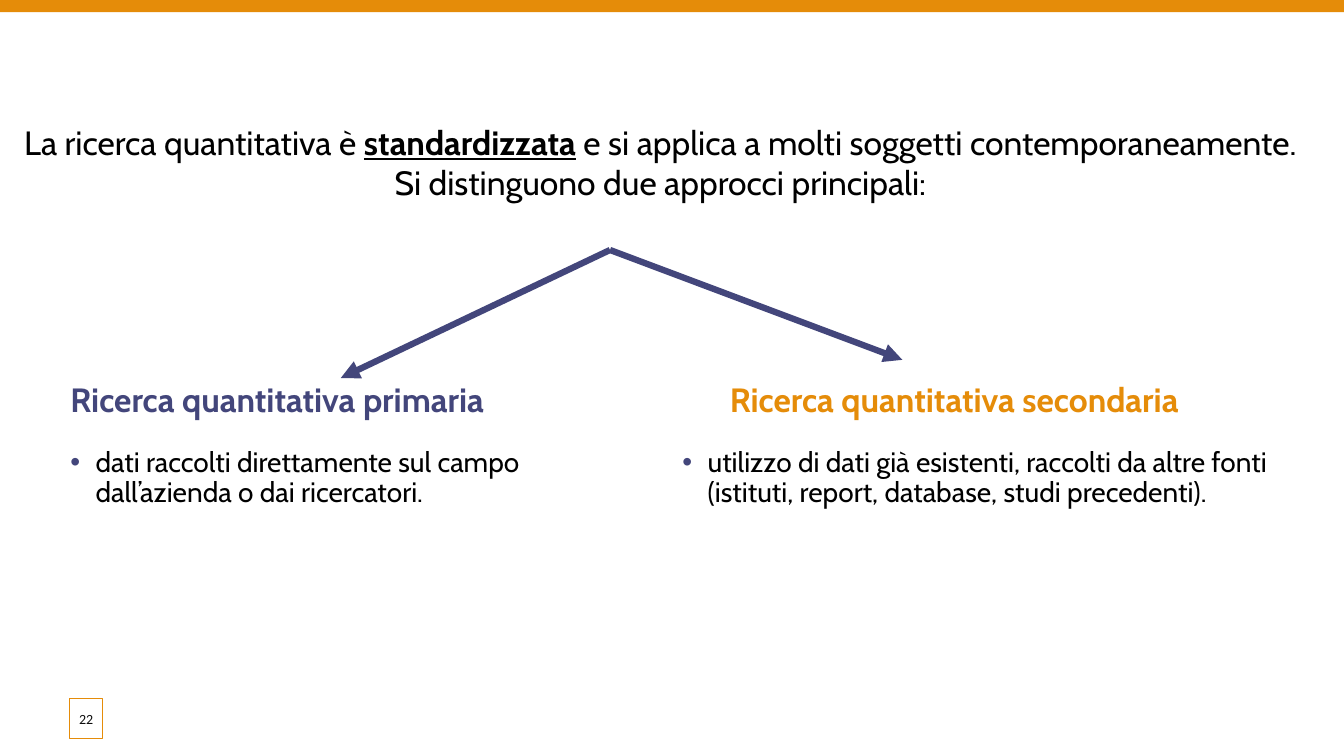
from dataclasses import dataclass

from lxml.etree import SubElement
from pptx import Presentation
from pptx.dml.color import RGBColor
from pptx.enum.shapes import MSO_CONNECTOR as Connector, MSO_SHAPE as Preset
from pptx.enum.text import MSO_ANCHOR as Anchor, PP_ALIGN as Align
from pptx.oxml.ns import qn
from pptx.util import Inches, Pt

ORANGE = RGBColor(0xE5, 0x8C, 0x09)
INDIGO = RGBColor(0x43, 0x46, 0x7B)
BLACK = RGBColor(0, 0, 0)
WHITE = RGBColor(0xFF, 0xFF, 0xFF)
DARK = RGBColor(0x0D, 0x0D, 0x0D)

SLIDE_WIDTH = 13.33
FORK = (6.05, 2.48)
HEADING_TOP, DETAIL_TOP = 3.75, 4.4


@dataclass(frozen=True)
class Approach:
    heading: str
    detail: str
    color: RGBColor
    heading_left: float
    detail_left: float
    detail_width: float
    arrow_tip: tuple[float, float]


APPROACHES = (
    Approach("Ricerca quantitativa primaria",
             "dati raccolti direttamente sul campo dall’azienda o dai ricercatori.",
             INDIGO, 0.6, 0.6, 5.57, (3.38, 3.75)),
    Approach("Ricerca quantitativa secondaria",
             "utilizzo di dati già esistenti, raccolti da altre fonti "
             "(istituti, report, database, studi precedenti).",
             ORANGE, 7.14, 6.67, 6.04, (8.95, 3.57)),
)


def add_span(para, text: str, *, size: float, color: RGBColor = BLACK,
             font: str = "Cabin", bold: bool = False, underline: bool = False):
    span = para.add_run()
    span.text = text
    span.font.name = font
    span.font.size = Pt(size)
    span.font.bold = bold
    span.font.underline = underline
    span.font.color.rgb = color


def add_box(page, left: float, top: float, width: float, height: float):
    box = page.shapes.add_textbox(*map(Inches, (left, top, width, height)))
    box.text_frame.word_wrap = True
    return box.text_frame


def add_rectangle(page, left: float, top: float, width: float, height: float,
                  fill: RGBColor):
    shape = page.shapes.add_shape(
        Preset.RECTANGLE, *map(Inches, (left, top, width, height)))
    shape.shadow.inherit = False
    shape.fill.solid()
    shape.fill.fore_color.rgb = fill
    shape.line.fill.background()
    return shape


def add_bullet(para, color: RGBColor):
    properties = para._p.get_or_add_pPr()
    properties.set("marL", str(Inches(0.25)))
    properties.set("indent", str(-Inches(0.25)))
    bullet_color = SubElement(properties, qn("a:buClr"))
    SubElement(bullet_color, qn("a:srgbClr"), val=str(color))
    SubElement(properties, qn("a:buFont"), typeface="Arial")
    SubElement(properties, qn("a:buChar"), char="•")


def add_arrow(page, start: tuple[float, float], end: tuple[float, float]):
    arrow = page.shapes.add_connector(
        Connector.STRAIGHT, *map(Inches, (*start, *end)))
    arrow.line.color.rgb = INDIGO
    arrow.line.width = Pt(4.5)
    SubElement(arrow.line._get_or_add_ln(), qn("a:tailEnd"), type="triangle")
    SubElement(arrow._element.spPr, qn("a:effectLst"))


def add_introduction(page):
    frame = add_box(page, 0.11, 1.16, 12.88, 0.91)
    first = frame.paragraphs[0]
    second = frame.add_paragraph()
    first.alignment = second.alignment = Align.CENTER
    add_span(first, "La ricerca quantitativa è ", size=24)
    add_span(first, "standardizzata", size=24, bold=True, underline=True)
    add_span(first, " e si applica a molti soggetti contemporaneamente.", size=24)
    add_span(second, "Si distinguono due approcci principali:", size=24)


def add_approach(page, approach: Approach):
    heading = add_box(page, approach.heading_left, HEADING_TOP, 5.57, 0.65).paragraphs[0]
    heading.line_spacing = 0.9
    add_span(heading, approach.heading, size=24, color=approach.color, bold=True)
    detail = add_box(page, approach.detail_left, DETAIL_TOP,
                     approach.detail_width, 2.06).paragraphs[0]
    detail.line_spacing = 0.9
    add_bullet(detail, INDIGO)
    add_span(detail, approach.detail, size=20)
    add_arrow(page, FORK, approach.arrow_tip)


def add_page_number(page, number: str):
    badge = add_rectangle(page, 0.69, 6.93, 0.33, 0.4, WHITE)
    fill_color = badge._element.spPr.find(qn("a:solidFill"))[0]
    SubElement(fill_color, qn("a:alpha"), val="82000")
    badge.line.color.rgb = ORANGE
    badge.line.width = Pt(0.75)
    frame = badge.text_frame
    frame.margin_left = frame.margin_right = 0
    frame.vertical_anchor = Anchor.MIDDLE
    para = frame.paragraphs[0]
    para.alignment = Align.CENTER
    add_span(para, number, size=10, color=DARK, font="Calibri")


def main():
    deck = Presentation()
    deck.slide_width = Inches(SLIDE_WIDTH)
    deck.slide_height = Inches(7.5)
    page = deck.slides.add_slide(deck.slide_layouts[6])
    add_rectangle(page, 0, 0, SLIDE_WIDTH, 0.12, ORANGE)
    add_introduction(page)
    for approach in APPROACHES:
        add_approach(page, approach)
    add_page_number(page, "22")
    deck.save("out.pptx")


if __name__ == "__main__":
    main()
